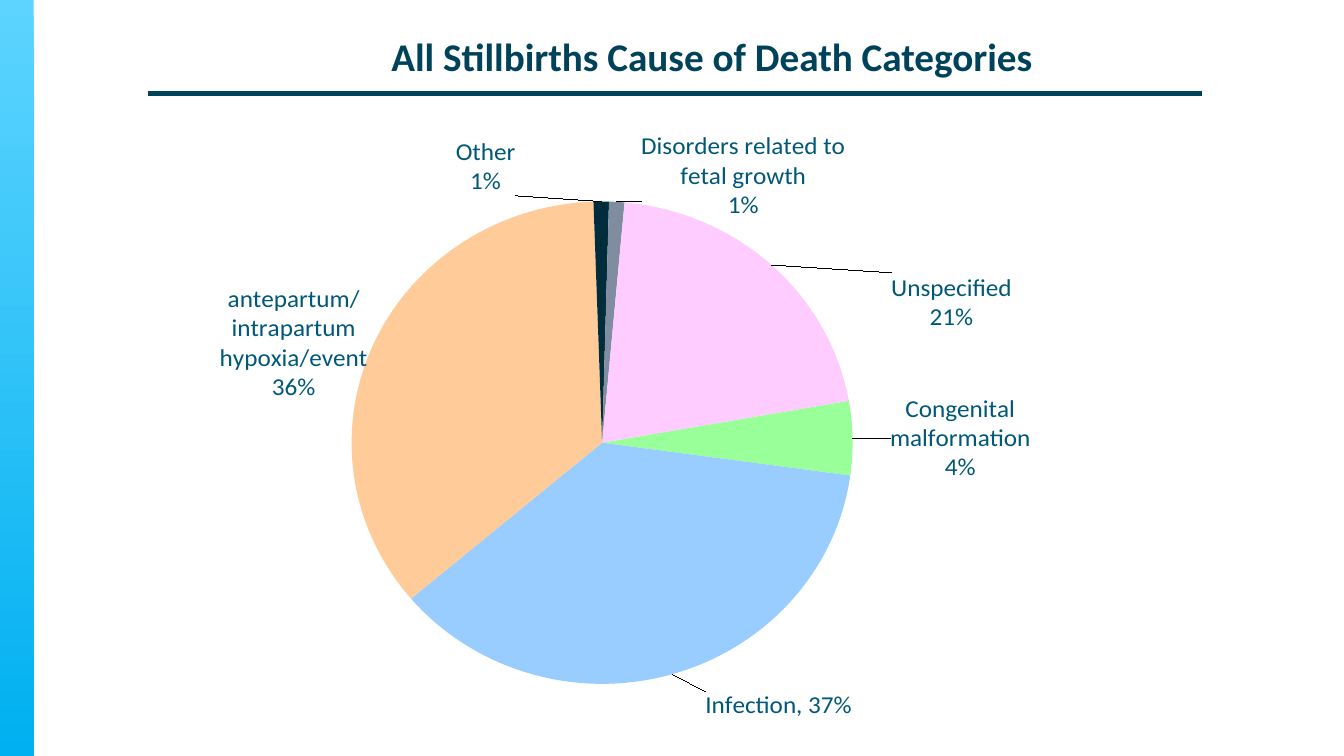
from dataclasses import dataclass

from lxml import etree
from pptx import Presentation
from pptx import util as u
from pptx.chart import data as chart_data
from pptx.dml.color import RGBColor
from pptx.enum import chart as charts, shapes, text
from pptx.oxml import ns, parse_xml

PX = 9525
FONT = "Calibri"
NAVY = RGBColor(0x00, 0x42, 0x5A)
TEAL = RGBColor(0x00, 0x58, 0x78)
SKY = RGBColor(0x5D, 0xD4, 0xFF)
BLUE = RGBColor(0x00, 0xB0, 0xF0)


@dataclass
class Cause:
    category: str
    share: int
    color: RGBColor
    shift_x: float
    shift_y: float
    caption: str = ""


CAUSES = [
    Cause("Congenital malformation", 5, RGBColor(0x99, 0xFF, 0x99), 0.03, 0,
          "Congenital malformation\n4%"),
    Cause("Infection", 37, RGBColor(0x99, 0xCC, 0xFF), 0.03, 0.02, "Infection, 37%"),
    Cause("antepartum/intrapartum hypoxia/event", 36, RGBColor(0xFF, 0xCC, 0x99), 0, 0.1),
    Cause("Other", 1, RGBColor(0x00, 0x2C, 0x3C), -0.11, 0),
    Cause("Disorders related to fetal growth", 1, RGBColor(0x80, 0x8D, 0xA0), 0.12, 0.04),
    Cause("Unspecified", 21, RGBColor(0xFF, 0xCC, 0xFF), 0.11, 0.12),
]


def px(length: int) -> u.Emu:
    return u.Emu(length * PX)


def set_font(font, size: int, color: RGBColor, bold: bool = False) -> None:
    font.name = FONT
    font.size = u.Pt(size)
    font.bold = bold
    font.color.rgb = color


def add_text(page, content: str, *, left: int, top: int, width: int, height: int,
             size: int, color: RGBColor, bold: bool) -> None:
    box = page.shapes.add_textbox(px(left), px(top), px(width), px(height))
    frame = box.text_frame
    frame.word_wrap = True
    frame.vertical_anchor = text.MSO_ANCHOR.BOTTOM
    para = frame.paragraphs[0]
    para.alignment = text.PP_ALIGN.CENTER
    span = para.add_run()
    span.text = content
    set_font(span.font, size, color, bold)


def add_side_bar(page) -> None:
    bar = page.shapes.add_shape(shapes.MSO_SHAPE.RECTANGLE, 0, 0, px(32), px(720))
    bar.shadow.inherit = False
    bar.line.fill.background()
    bar.fill.gradient()
    bar.fill.gradient_angle = 270
    for stop, position, color in zip(bar.fill.gradient_stops, (0, 1), (SKY, BLUE)):
        stop.position = position
        stop.color.rgb = color


def add_rule(page) -> None:
    rule = page.shapes.add_connector(
        shapes.MSO_CONNECTOR.STRAIGHT, px(141), px(89), px(1145), px(89))
    rule.line.color.rgb = NAVY
    rule.line.width = u.Pt(3)
    etree.SubElement(rule._element.spPr, ns.qn("a:effectLst"))


def manual_layout(**settings):
    entries = "".join(f'<c:{name} val="{value}"/>' for name, value in settings.items())
    return parse_xml(f"<c:layout {ns.nsdecls('c')}><c:manualLayout>{entries}"
                     "</c:manualLayout></c:layout>")


def label_slice(series, index: int, cause: Cause) -> None:
    point = series.points[index]
    point.format.fill.solid()
    point.format.fill.fore_color.rgb = cause.color
    label = point.data_label
    if cause.caption:
        label.text_frame.text = cause.caption
        for para in label.text_frame.paragraphs:
            for span in para.runs:
                set_font(span.font, 18, TEAL)
    else:
        set_font(label.font, 18, TEAL)
    label.position = charts.XL_LABEL_POSITION.OUTSIDE_END
    element = series._element.xpath(f"c:dLbls/c:dLbl[c:idx/@val={index}]")[0]
    for name, shown in (("showVal", "0"), ("showCatName", "1"), ("showPercent", "1")):
        element.find(ns.qn(f"c:{name}")).set("val", shown)
    element.insert(1, manual_layout(x=cause.shift_x, y=cause.shift_y))


def add_pie(page) -> None:
    values = chart_data.CategoryChartData()
    values.categories = [cause.category for cause in CAUSES]
    values.add_series("All Stillbirths", [cause.share for cause in CAUSES])
    chart = page.shapes.add_chart(
        charts.XL_CHART_TYPE.PIE, px(73), px(103), px(1001), px(582), values).chart
    chart.has_legend = False
    chart.has_title = False
    set_font(chart.font, 10, TEAL)
    plot = chart.plots[0]
    plot.vary_by_categories = True
    series = plot.series[0]
    labels = series.data_labels
    labels.show_value = False
    labels.show_category_name = True
    labels.show_percentage = True
    labels.position = charts.XL_LABEL_POSITION.OUTSIDE_END
    set_font(labels.font, 18, TEAL)
    for index, cause in enumerate(CAUSES):
        label_slice(series, index, cause)
    pie = plot._element
    for angle in pie.findall(ns.qn("c:firstSliceAng")):
        pie.remove(angle)
    etree.SubElement(pie, ns.qn("c:firstSliceAng")).set("val", "80")
    area = pie.getparent()
    for layout in area.findall(ns.qn("c:layout")):
        area.remove(layout)
    area.insert(0, manual_layout(layoutTarget="inner", xMode="edge", yMode="edge",
                                 x=0.26, y=0.12, w=0.48, h=0.82))


def main() -> None:
    deck = Presentation()
    deck.slide_width, deck.slide_height = px(1280), px(720)
    page = deck.slides.add_slide(deck.slide_layouts[6])
    add_side_bar(page)
    add_text(page, "All Stillbirths Cause of Death Categories", left=246, top=26,
             width=864, height=54, size=28, color=NAVY, bold=True)
    add_pie(page)
    add_rule(page)
    deck.save("out.pptx")


if __name__ == "__main__":
    main()
